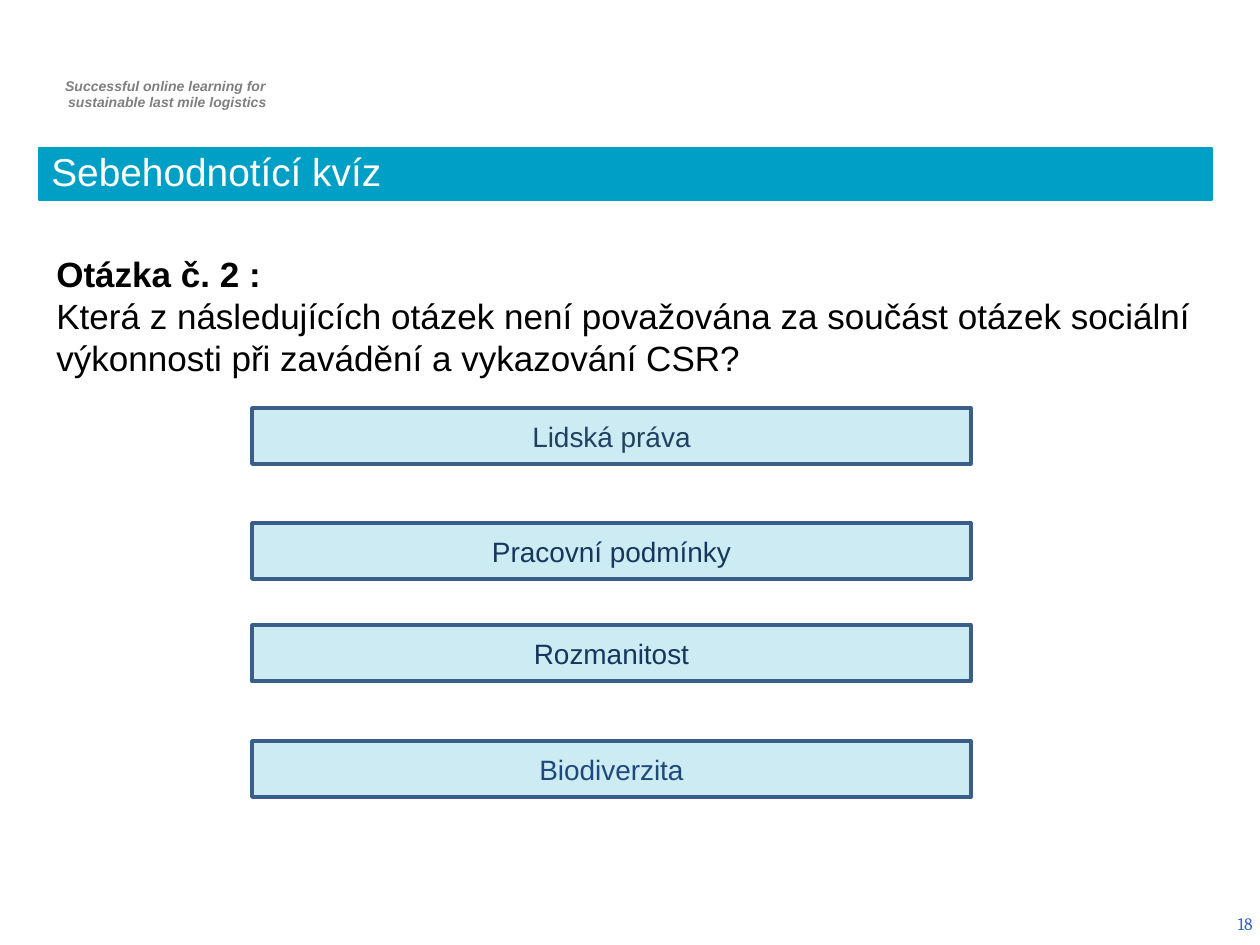
from pptx import Presentation
from pptx.dml.color import RGBColor
from pptx.enum.shapes import MSO_SHAPE as SHAPE
from pptx.enum.text import MSO_ANCHOR as ANCHOR, PP_ALIGN as ALIGN
from pptx.oxml.ns import qn
from pptx.util import Emu, Pt
from lxml.etree import SubElement

PX = 914400 / 126
COLORS = {
    "brand": "009FC6", "border": "395E89", "white": "FFFFFF", "black": "000000",
    "grey": "7F7F7F", "number": "3366CC", "navy": "17365D", "slate": "244061",
    "blue": "1F497D",
}
OPTIONS = [
    (408, "Lidská práva", "slate"),
    (523, "Pracovní podmínky", "navy"),
    (625, "Rozmanitost", "navy"),
    (741, "Biodiverzita", "blue"),
]


def px(n):
    """Turn px into EMU."""
    return Emu(round(n * PX))


def rgb(name):
    """Look up a named colour."""
    return RGBColor.from_string(COLORS[name])


def add_text(tf, text, size, color, font="Arial", bold=False, italic=False,
             align=ALIGN.LEFT, anchor=ANCHOR.TOP, spacing=None, first=True):
    """Write one paragraph into a text frame."""
    tf.word_wrap = True
    tf.vertical_anchor = anchor
    p = tf.paragraphs[0] if first else tf.add_paragraph()
    p.alignment = align
    if spacing:
        p.line_spacing = spacing
    r = p.add_run()
    r.text = text
    r.font.name, r.font.size = font, Pt(size)
    r.font.bold, r.font.italic = bold, italic
    r.font.color.rgb = rgb(color)
    return p


def add_textbox(s, box):
    """Add a text box and return its text frame."""
    return s.shapes.add_textbox(*map(px, box)).text_frame


def add_rect(s, box, line, width, alpha=None):
    """Add a brand-coloured rectangle, optionally see-through."""
    sp = s.shapes.add_shape(SHAPE.RECTANGLE, *map(px, box))
    sp.shadow.inherit = False
    sp.fill.solid()
    sp.fill.fore_color.rgb = rgb("brand")
    sp.line.color.rgb = rgb(line)
    sp.line.width = Pt(width)
    if alpha:
        clr = sp._element.spPr.find(qn("a:solidFill")).find(qn("a:srgbClr"))
        SubElement(clr, qn("a:alpha")).set("val", str(alpha * 1000))
    return sp


def add_tagline(s, box):
    """Write the two-line course name."""
    tf = add_textbox(s, box)
    lines = ["Successful online learning for ", "sustainable last mile logistics"]
    for i, text in enumerate(lines):
        p = add_text(tf, text, 8, "grey", bold=True, italic=True,
                     align=ALIGN.CENTER, first=i == 0)
        p._p.get_or_add_pPr().set("marL", str(px(5)))


def add_title(s, box):
    """Draw the title bar."""
    sp = add_rect(s, box, "brand", 0.75)
    add_text(sp.text_frame, "Sebehodnotící kvíz", 22.2, "white",
             anchor=ANCHOR.BOTTOM, spacing=0.8)


def add_question(s, box):
    """Write the question heading and its wording."""
    tf = add_textbox(s, box)
    add_text(tf, "Otázka č. 2 :", 20, "black", bold=True)
    add_text(tf, "Která z následujících otázek není považována za součást otázek "
             "sociální výkonnosti při zavádění a vykazování CSR?", 20, "black",
             first=False)


def add_options(s, box):
    """Draw the answer buttons down the box."""
    x, y, w, h = box
    for top, text, color in OPTIONS:
        sp = add_rect(s, (x, y + top - OPTIONS[0][0], w, h), "border", 2, alpha=20)
        add_text(sp.text_frame, text, 16, color, align=ALIGN.CENTER,
                 anchor=ANCHOR.MIDDLE)


def add_number(s, box):
    """Write the slide number."""
    add_text(add_textbox(s, box), "18", 10, "number", font="Cambria",
             align=ALIGN.RIGHT, anchor=ANCHOR.MIDDLE)


def main():
    """Build and save the quiz slide."""
    prs = Presentation()
    prs.slide_width, prs.slide_height = px(1260), px(945)
    s = prs.slides.add_slide(prs.slide_layouts[6])
    add_tagline(s, (37, 71, 256, 47))
    add_title(s, (39, 148, 1173, 52))
    add_question(s, (44, 246, 1173, 140))
    add_options(s, (252, 408, 719, 56))
    add_number(s, (971, 899, 294, 50))
    prs.save("out.pptx")


if __name__ == "__main__":
    main()
